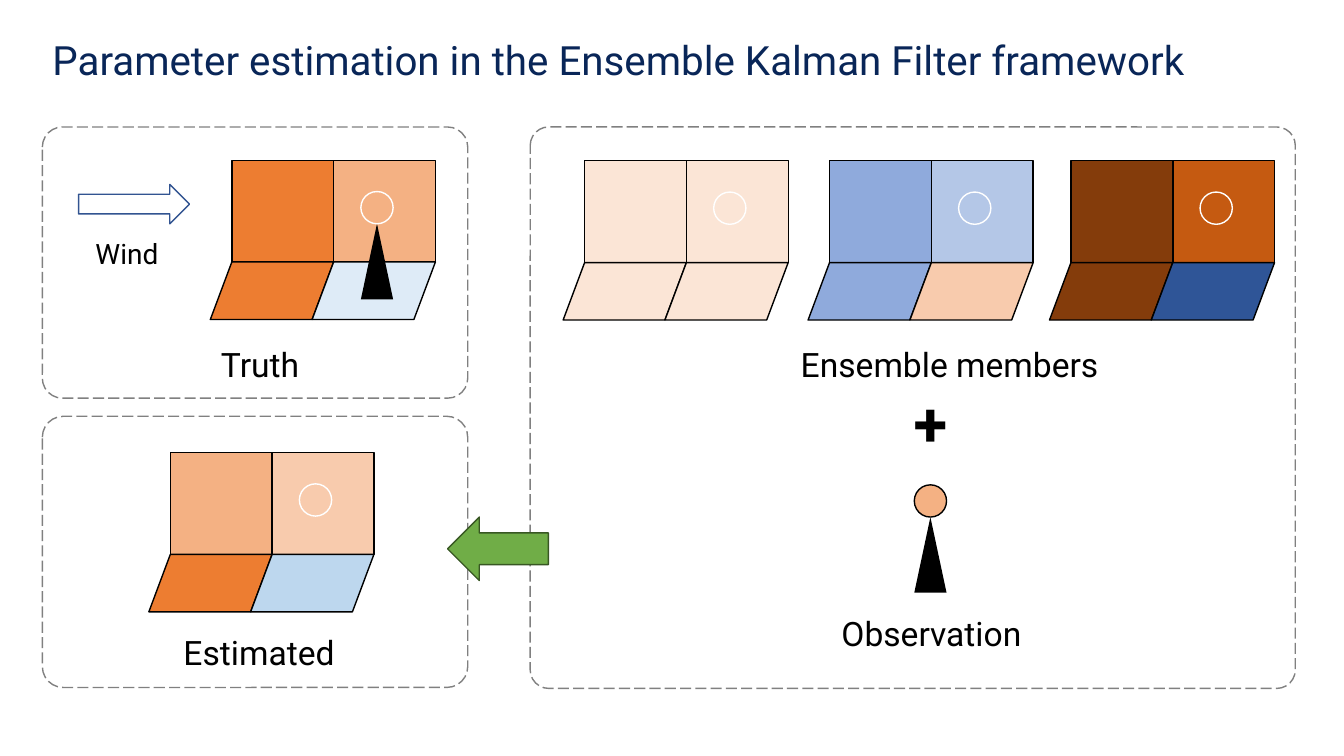
from dataclasses import dataclass
from typing import Optional

from pptx import Presentation
from pptx.dml.color import RGBColor
from pptx.enum.dml import MSO_LINE_DASH_STYLE as Dash
from pptx.enum.shapes import MSO_SHAPE as Preset
from pptx.enum.text import MSO_ANCHOR as Anchor
from pptx.enum.text import MSO_AUTO_SIZE as AutoSize
from pptx.enum.text import PP_ALIGN as Align
from pptx.shapes.autoshape import Shape
from pptx.util import Inches, Length, Pt

# Grid: 133.33 columns by 75 rows of square cells
COLUMNS, ROWS = 133.33, 75
UNIT = Inches(0.1)
FONT = "Roboto"
COLORS = {
    "navy": "092658", "black": "000000", "white": "FFFFFF", "gray": "808080",
    "orange": "ED7D31", "apricot": "F4B183", "peach": "F8CBAD", "cream": "FBE5D6",
    "brown": "843C0B", "rust": "C55A11", "ice": "DEEBF7", "sky": "BDD7EE",
    "periwinkle": "8FAADC", "pale blue": "B4C7E7", "deep blue": "2F5597",
    "wind blue": "325491", "green": "70AD47", "dark green": "385723",
}

# Sizes shared by the scenes and towers, in grid units
WALL = 10.1
FLOOR_HEIGHT, FLOOR_SLANT = 5.7, 2.13
HEAD, MAST_HEIGHT = 3.2, 7.5
HEAD_OFFSET = (12.8, 3.1)


@dataclass(frozen=True)
class Panel:
    left: float
    top: float
    width: float
    height: float
    rounding: float


@dataclass(frozen=True)
class Scene:
    left: float
    top: float
    walls: tuple[str, str]
    floors: tuple[str, str]


@dataclass(frozen=True)
class Caption:
    words: str
    left: float
    top: float
    width: float
    height: float = 5
    size: float = 24
    bold: bool = False


TRUTH = Scene(23, 15.9, ("orange", "apricot"), ("orange", "ice"))
ESTIMATED = Scene(16.9, 44.9, ("apricot", "peach"), ("orange", "sky"))
MEMBERS = [
    Scene(58, 15.95, ("cream", "cream"), ("cream", "cream")),
    Scene(82.3, 15.95, ("periwinkle", "pale blue"), ("periwinkle", "peach")),
    Scene(106.25, 15.95, ("brown", "rust"), ("brown", "deep blue")),
]
PANELS = [
    Panel(4.2, 12.6, 42.2, 26.9, 0.074),
    Panel(4.2, 41.3, 42.2, 26.9, 0.077),
    Panel(52.6, 12.6, 75.9, 55.7, 0.033),
]
CAPTIONS = [
    Caption("Wind", 8.4, 23, 8.4, 4.4, 20),
    Caption("Truth", 20.9, 33.6, 9.8),
    Caption("Estimated", 17.2, 62.2, 17),
    Caption("Ensemble members", 78.2, 33.6, 32),
    Caption("+", 89.5, 37.7, 5.6, 8.4, 44, True),
    Caption("Observation", 82.3, 60.3, 20.2),
]

deck = Presentation()
deck.slide_width = grid_width = int(COLUMNS * UNIT)
deck.slide_height = ROWS * UNIT
slide = deck.slides.add_slide(deck.slide_layouts[5])


def cells(*counts: float) -> list[Length]:
    return [Length(round(count * UNIT)) for count in counts]


def color(name: str) -> RGBColor:
    return RGBColor.from_string(COLORS[name])


def draw(preset: Preset, left: float, top: float, width: float, height: float,
         fill: Optional[str] = None, line: Optional[str] = None,
         adjust: Optional[float] = None) -> Shape:
    shape = slide.shapes.add_shape(preset, *cells(left, top, width, height))
    shape.shadow.inherit = False
    if fill:
        shape.fill.solid()
        shape.fill.fore_color.rgb = color(fill)
    else:
        shape.fill.background()
    if line:
        shape.line.color.rgb = color(line)
        shape.line.width = Pt(1)
    else:
        shape.line.fill.background()
    if adjust is not None:
        shape.adjustments[0] = adjust
    return shape


def draw_panel(panel: Panel) -> None:
    frame = draw(Preset.ROUNDED_RECTANGLE, panel.left, panel.top, panel.width,
                 panel.height, line="gray", adjust=panel.rounding)
    frame.line.dash_style = Dash.LONG_DASH


def draw_head(left: float, top: float, fill: Optional[str], line: str) -> None:
    draw(Preset.OVAL, left, top, HEAD, HEAD, fill, line)


def draw_mast(left: float, top: float) -> None:
    draw(Preset.ISOSCELES_TRIANGLE, left, top + HEAD, HEAD, MAST_HEIGHT, "black")


def draw_scene(scene: Scene, with_mast: bool = False) -> None:
    for column, (wall, floor) in enumerate(zip(scene.walls, scene.floors)):
        left = scene.left + column * WALL
        draw(Preset.RECTANGLE, left, scene.top, WALL, WALL, wall, "black")
        draw(Preset.PARALLELOGRAM, left - FLOOR_SLANT, scene.top + WALL,
             WALL + FLOOR_SLANT, FLOOR_HEIGHT, floor, "black",
             FLOOR_SLANT / FLOOR_HEIGHT)
    head_left, head_top = scene.left + HEAD_OFFSET[0], scene.top + HEAD_OFFSET[1]
    if with_mast:
        draw_mast(head_left, head_top)
    draw_head(head_left, head_top, None, "white")


def write_caption(caption: Caption) -> None:
    box = slide.shapes.add_textbox(
        *cells(caption.left, caption.top, caption.width, caption.height))
    frame = box.text_frame
    frame.word_wrap = False
    frame.auto_size = AutoSize.SHAPE_TO_FIT_TEXT
    line = frame.paragraphs[0]
    line.alignment = Align.CENTER
    run = line.add_run()
    run.text = caption.words
    run.font.name = FONT
    run.font.size = Pt(caption.size)
    run.font.bold = caption.bold
    run.font.color.rgb = color("black")


# Title
title = slide.shapes.title
title.left, title.top, title.width, title.height = cells(4.2, 2.7, 124.9, 7)
title.text_frame.auto_size = AutoSize.NONE
title.text_frame.vertical_anchor = Anchor.MIDDLE
heading = title.text_frame.paragraphs[0]
heading.alignment = Align.LEFT
heading.line_spacing = 0.9
heading_run = heading.add_run()
heading_run.text = "Parameter estimation in the Ensemble Kalman Filter framework"
heading_run.font.name = FONT
heading_run.font.size = Pt(28.8)
heading_run.font.color.rgb = color("navy")

# Dashed panels
for panel in PANELS:
    draw_panel(panel)

# Truth with its wind and tower, then the estimate and the members
draw_scene(TRUTH, with_mast=True)
draw(Preset.RIGHT_ARROW, 7.8, 18.3, 11, 3.9, "white", "wind blue")
for scene in (ESTIMATED, *MEMBERS):
    draw_scene(scene)

# Observation tower
draw_mast(90.7, 48.1)
draw_head(90.7, 48.1, "apricot", "black")

# Captions
for caption in CAPTIONS:
    write_caption(caption)

# Arrow from the ensemble to the estimate
draw(Preset.LEFT_ARROW, 44.4, 51.3, 10, 6.3, "green", "dark green")

deck.save("out.pptx")
